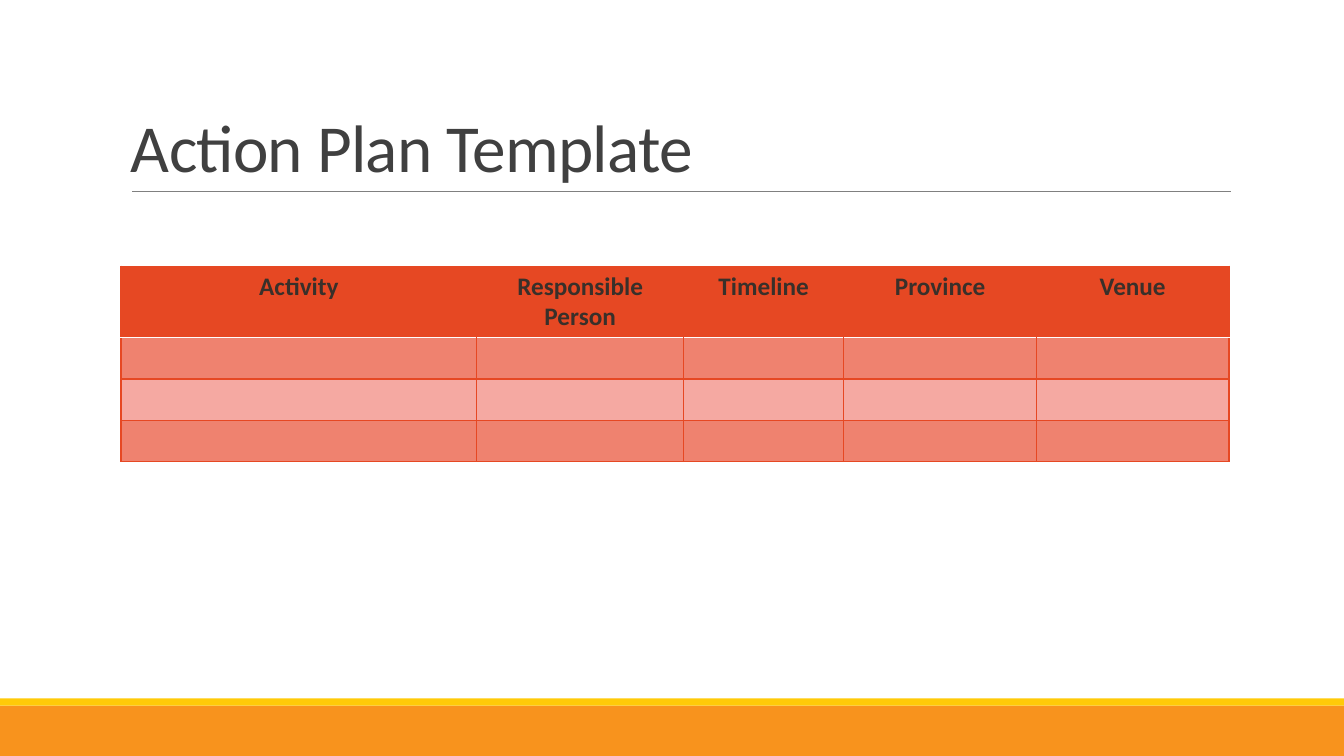
import pptx
import pptx.util
import pptx.dml.color
import pptx.enum.shapes
import pptx.enum.text
import pptx.oxml.ns
from lxml import etree

Inches = pptx.util.Inches
Align = pptx.enum.text.PP_ALIGN
qn = pptx.oxml.ns.qn

COLORS = {
    "title": "404040",
    "rule": "808080",
    "footer": "F8931D",
    "stripe": "FFCA08",
    "header": "E64823",
    "header text": "39302A",
    "header edge": "FFFFFF",
    "dark band": "EF826F",
    "light band": "F5A9A2",
}
FONT = "Calibri"
HEADINGS = ["Activity", "Responsible Person", "Timeline", "Province", "Venue"]
COLUMN_WIDTHS = [3.53, 2.05, 1.59, 1.91, 1.91]
ROW_HEIGHTS = [0.71, 0.41, 0.41, 0.41]


def color(name):
    return pptx.dml.color.RGBColor.from_string(COLORS[name])


def write_text(frame, text, size, color_name, bold=False, align=Align.LEFT,
               line_spacing=None, tracking=None):
    paragraph = frame.paragraphs[0]
    paragraph.alignment = align
    paragraph.line_spacing = line_spacing
    run = paragraph.add_run()
    run.text = text
    run.font.name = FONT
    run.font.size = pptx.util.Pt(size)
    run.font.bold = bold
    run.font.color.rgb = color(color_name)
    if tracking is not None:
        run._r.get_or_add_rPr().set("spc", str(round(tracking * 100)))


def add_bar(slide, left, top, width, height, color_name):
    bar = slide.shapes.add_shape(
        pptx.enum.shapes.MSO_SHAPE.RECTANGLE,
        Inches(left), Inches(top), Inches(width), Inches(height))
    bar.shadow.inherit = False
    bar.fill.solid()
    bar.fill.fore_color.rgb = color(color_name)
    bar.line.fill.background()


def add_footer(slide, left, top, width, height):
    stripe_height = 0.07
    add_bar(slide, left, top + stripe_height, width, height - stripe_height, "footer")
    add_bar(slide, left, top, width, stripe_height, "stripe")


def add_title(slide, left, top, width, height):
    # Rule below the title
    bottom = Inches(top + height)
    rule = slide.shapes.add_connector(
        pptx.enum.shapes.MSO_CONNECTOR.STRAIGHT,
        Inches(left + 0.11), bottom, Inches(left + width + 0.01), bottom)
    rule.line.color.rgb = color("rule")
    rule.line.width = pptx.util.Pt(0.5)
    etree.SubElement(rule._element.spPr, qn("a:effectLst"))

    # Title text
    title = slide.shapes.add_textbox(
        Inches(left), Inches(top), Inches(width), Inches(height))
    frame = title.text_frame
    frame.word_wrap = True
    frame.vertical_anchor = pptx.enum.text.MSO_ANCHOR.BOTTOM
    write_text(frame, "Action Plan Template", 48, "title",
               line_spacing=0.85, tracking=-0.5)


def set_borders(cell, borders):
    """Set (color name, points) or None for the left, right, top and bottom edges."""
    properties = cell._tc.get_or_add_tcPr()
    for index, (side, border) in enumerate(zip("LRTB", borders)):
        edge = etree.Element(qn(f"a:ln{side}"))
        if border is None:
            etree.SubElement(edge, qn("a:noFill"))
        else:
            color_name, points = border
            edge.set("w", str(pptx.util.Pt(points)))
            fill = etree.SubElement(edge, qn("a:solidFill"))
            etree.SubElement(fill, qn("a:srgbClr"), val=COLORS[color_name])
        properties.insert(index, edge)


def add_plan_table(slide, left, top):
    table = slide.shapes.add_table(
        len(ROW_HEIGHTS), len(COLUMN_WIDTHS), Inches(left), Inches(top),
        Inches(sum(COLUMN_WIDTHS)), Inches(sum(ROW_HEIGHTS))).table
    table.horz_banding = False
    for column, width in zip(table.columns, COLUMN_WIDTHS):
        column.width = Inches(width)
    for row, height in zip(table.rows, ROW_HEIGHTS):
        row.height = Inches(height)

    line = ("header", 1)
    divider = ("header edge", 1.25)
    last = len(HEADINGS) - 1
    for row_index, row in enumerate(table.rows):
        for column_index, cell in enumerate(row.cells):
            if row_index == 0:
                fill_name = "header"
                borders = [line if column_index == 0 else None,
                           line if column_index == last else None, line, divider]
                write_text(cell.text_frame, HEADINGS[column_index], 18,
                           "header text", bold=True, align=Align.CENTER)
            else:
                fill_name = "dark band" if row_index % 2 else "light band"
                borders = [line, line, divider if row_index == 1 else line, line]
            cell.fill.solid()
            cell.fill.fore_color.rgb = color(fill_name)
            set_borders(cell, borders)


def main():
    presentation = pptx.Presentation()
    presentation.slide_width = Inches(13.33)
    presentation.slide_height = Inches(7.5)
    slide = presentation.slides.add_slide(presentation.slide_layouts[6])
    add_footer(slide, 0, 6.93, 13.33, 0.57)
    add_title(slide, 1.2, 0.31, 11, 1.59)
    add_plan_table(slide, 1.2, 2.64)
    presentation.save("out.pptx")


if __name__ == "__main__":
    main()
